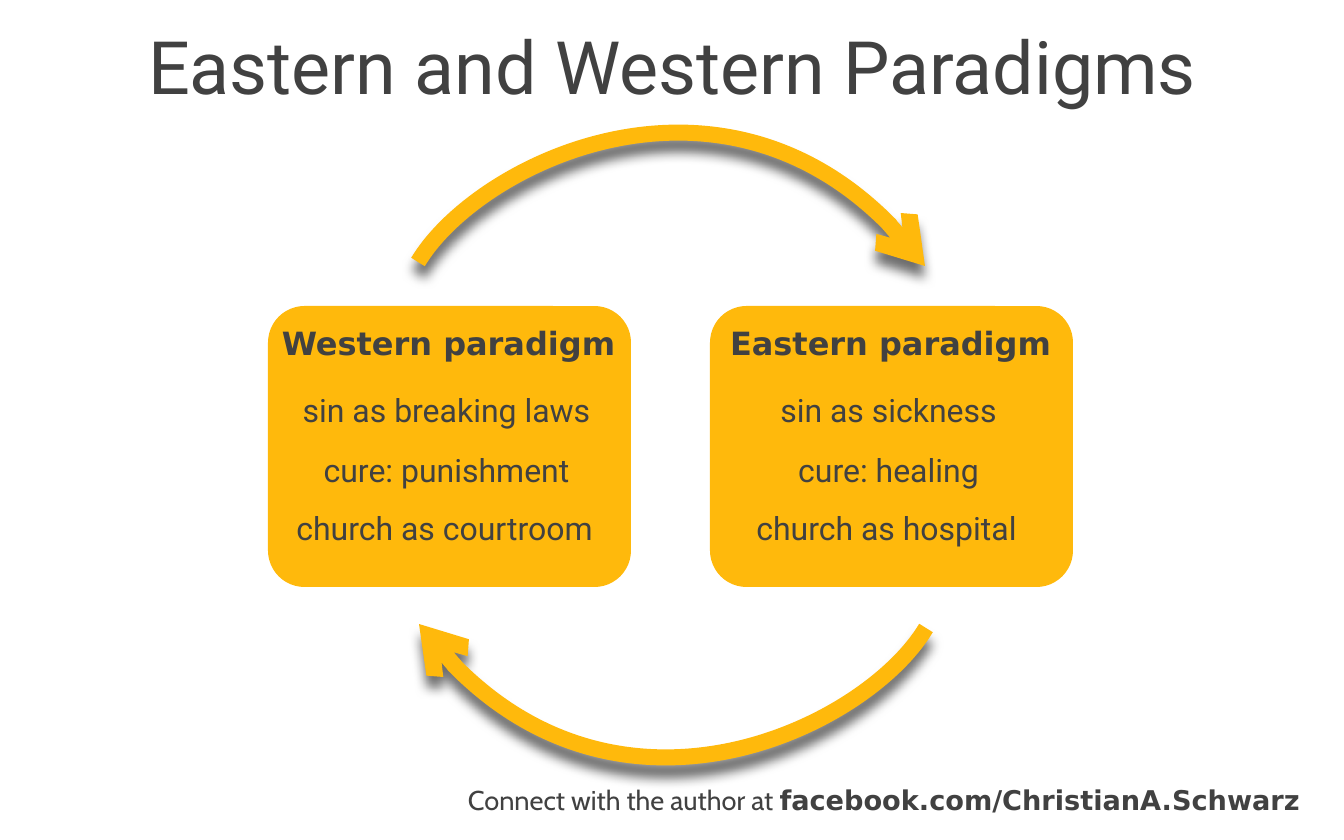
from lxml import etree
from pptx import Presentation, util as u
from pptx.dml.color import RGBColor
from pptx.enum import shapes, text
from pptx.oxml.ns import qn

TITLE = "Eastern and Western Paradigms"
FOOTER = [("Connect with the author at ", "Cabin", False),
          ("facebook.com/ChristianA.Schwarz", "DejaVu Sans", True)]
CARDS = [
    ["Western paradigm", "sin as breaking laws", "cure: punishment", "church as courtroom"],
    ["Eastern paradigm", "sin as sickness", "cure: healing", "church as hospital"],
]
COLORS = {"text": "414141", "gold": "FFB90C", "shadow": "000000"}

# Lengths in px
PX = 15875
SLIDE_W, SLIDE_H = 1344, 840
CARD_LEFT, CARD_TOP, CARD_W, CARD_H, CARD_STEP = 268, 306, 363, 281, 442
ROWS = [(-2, 320), (-4, 387), (-4, 447), (-6, 505)]  # offset from card, top
ROW_W, ROW_H = 365, 45
ARC = [(418, 262), (476, 165), (749, 29), (925, 266)]  # start, two handles, end
APEX = (671, 134)
TURN_X, TURN_Y = 1344, 890  # a half turn maps x to TURN_X - x, y to TURN_Y - y


def px(*values):
    return [u.Emu(v * PX) for v in values]


def color(name):
    return RGBColor.from_string(COLORS[name])


def style_run(r, size, font, bold=False):
    r.font.size, r.font.name, r.font.bold = u.Pt(size), font, bold
    r.font.color.rgb = color("text")


def prepare_frame(sp, align, inset=0, wrap=True):
    """Set margins, anchor and alignment; return the first paragraph."""
    tf = sp.text_frame
    tf.margin_left = tf.margin_right = tf.margin_top = tf.margin_bottom = inset * PX
    tf.vertical_anchor = text.MSO_ANCHOR.MIDDLE
    tf.word_wrap = wrap
    tf.auto_size = text.MSO_AUTO_SIZE.NONE
    p = tf.paragraphs[0]
    p.alignment = align
    return p


def add_card(s, left, lines):
    sp = s.shapes.add_shape(shapes.MSO_SHAPE.ROUNDED_RECTANGLE,
                            *px(left, CARD_TOP, CARD_W, CARD_H))
    sp.adjustments[0] = 0.13
    sp.shadow.inherit = False
    sp.fill.solid()
    sp.fill.fore_color.rgb = color("gold")
    sp.line.fill.background()
    for i, (line, (dx, top)) in enumerate(zip(lines, ROWS)):
        box = s.shapes.add_textbox(*px(left + dx, top, ROW_W, ROW_H))
        p = prepare_frame(box, text.PP_ALIGN.CENTER)
        p.text = line
        style_run(p.runs[0], 40, "Roboto" if i else "DejaVu Sans", i == 0)


def add_arc(s, curve, apex):
    """Draw one cubic curve with an arrowhead at its end and a soft shadow."""
    start, end = curve[0], curve[-1]
    fb = s.shapes.build_freeform(*start, scale=PX)
    fb.add_line_segments([apex, end], close=False)
    sp = fb.convert_to_shape()
    path = sp._element.spPr.find(".//" + qn("a:path"))
    for line in path.findall(qn("a:lnTo")):
        path.remove(line)
    bezier = etree.SubElement(path, qn("a:cubicBezTo"))
    left, top = sp.left // PX, sp.top // PX
    unit = int(path.get("w")) * PX // sp.width
    for x, y in curve[1:]:
        etree.SubElement(bezier, qn("a:pt"), x=str((x - left) * unit), y=str((y - top) * unit))

    sp.fill.background()
    sp.line.color.rgb = color("gold")
    sp.line.width = u.Pt(20)
    etree.SubElement(sp.line._get_or_add_ln(), qn("a:tailEnd"), type="arrow")
    sp.shadow.inherit = False
    effects = sp._element.spPr.find(qn("a:effectLst"))
    shadow = etree.SubElement(effects, qn("a:outerShdw"), blurRad=str(u.Pt(15)),
                              dist=str(u.Pt(15)), dir="5400000", rotWithShape="0")
    tint = etree.SubElement(shadow, qn("a:srgbClr"), val=COLORS["shadow"])
    etree.SubElement(tint, qn("a:alpha"), val="57000")


def half_turn(point):
    return TURN_X - point[0], TURN_Y - point[1]


def main():
    prs = Presentation()
    prs.slide_width, prs.slide_height = px(SLIDE_W, SLIDE_H)
    s = prs.slides.add_slide(prs.slide_layouts[5])

    title = s.shapes.title
    title.left, title.top, title.width, title.height = px(37, -58, 1271, 247)
    p = prepare_frame(title, text.PP_ALIGN.CENTER, inset=4)
    p.text = TITLE
    style_run(p.runs[0], 92, "Roboto")

    footer = s.shapes.add_textbox(*px(463, 783, 837, 33))
    p = prepare_frame(footer, text.PP_ALIGN.RIGHT, wrap=False)
    footer.text_frame.auto_size = text.MSO_AUTO_SIZE.SHAPE_TO_FIT_TEXT
    for words, font, bold in FOOTER:
        r = p.add_run()
        r.text = words
        style_run(r, 34, font, bold)

    for i, lines in enumerate(CARDS):
        add_card(s, CARD_LEFT + i * CARD_STEP, lines)

    add_arc(s, ARC, APEX)
    add_arc(s, [half_turn(point) for point in ARC], half_turn(APEX))
    prs.save("out.pptx")


if __name__ == "__main__":
    main()
